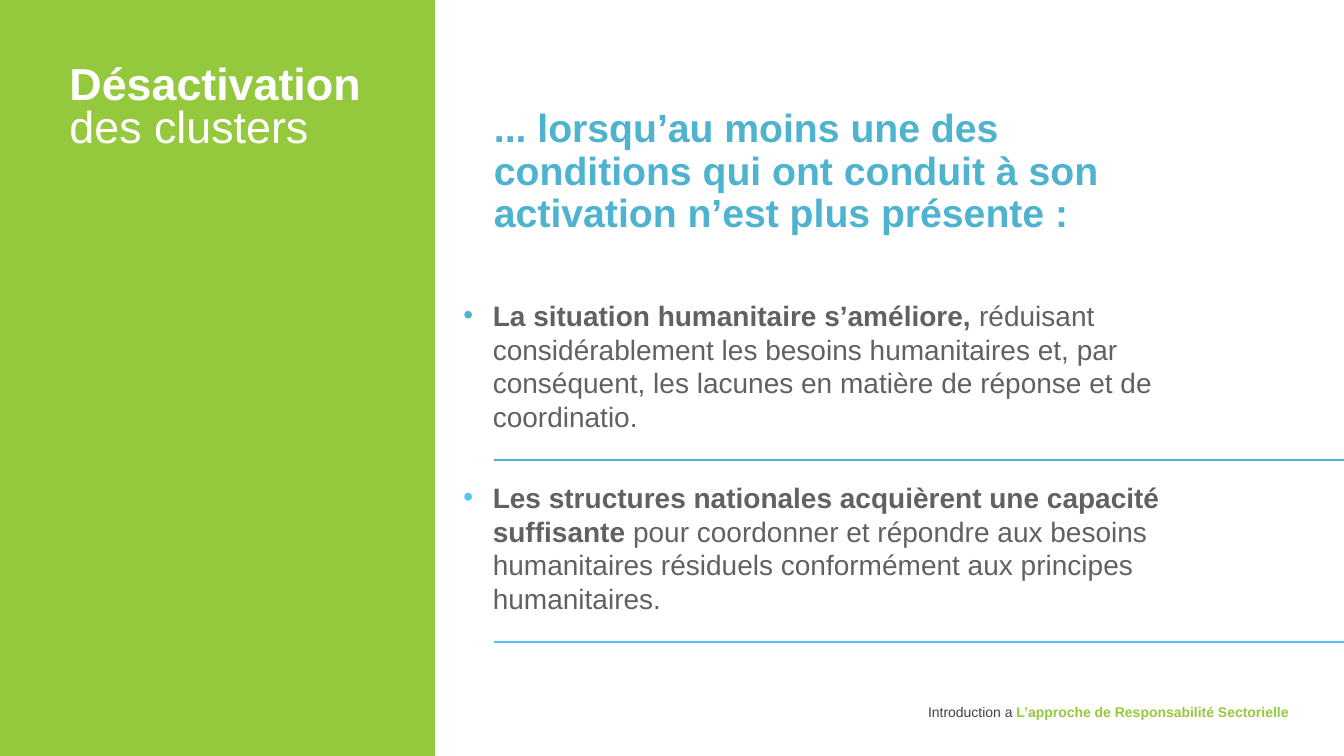
from pptx import Presentation
from pptx import util as u
from pptx.dml.color import RGBColor
from pptx.enum import shapes, text
from pptx.oxml import parse_xml
from pptx.oxml.ns import nsdecls

COLORS = {
    "green": "95C93D",
    "teal": "4EB3CF",
    "sky": "51C3F9",
    "gray": "606164",
    "dark": "404143",
    "white": "FFFFFF",
}


def set_frame(shape, left, top, width, height, margins):
    shape.left, shape.top = u.Cm(left), u.Cm(top)
    shape.width, shape.height = u.Cm(width), u.Cm(height)
    frame = shape.text_frame
    frame.word_wrap = True
    frame.auto_size = text.MSO_AUTO_SIZE.NONE
    frame.margin_left, frame.margin_top, frame.margin_right, frame.margin_bottom = map(u.Cm, margins)
    return frame


def format_run(run, size, color, bold):
    run.font.name = "Arial"
    run.font.size = u.Pt(size)
    run.font.bold = bold
    run.font.color.rgb = RGBColor.from_string(COLORS[color])


presentation = Presentation()
presentation.slide_width, presentation.slide_height = u.Cm(33.87), u.Cm(19.05)
slide = presentation.slides.add_slide(presentation.slide_layouts[5])
title = slide.shapes.title

panel = slide.shapes.add_shape(shapes.MSO_SHAPE.RECTANGLE, 0, 0, u.Cm(10.97), presentation.slide_height)
panel.shadow.inherit = False
panel.fill.solid()
panel.fill.fore_color.rgb = RGBColor.from_string(COLORS["green"])
panel.line.fill.background()
panel._element.addnext(title._element)

body_margins = (0, 0.13, 0.25, 0.13)
frame = set_frame(title, 1.75, 1.85, 9.22, 1.8, body_margins)
frame.vertical_anchor = text.MSO_ANCHOR.MIDDLE
frame.text = "Désactivation\vdes clusters"
paragraph = frame.paragraphs[0]
paragraph.alignment = text.PP_ALIGN.LEFT
paragraph.line_spacing = 0.8
for run, bold in zip(paragraph.runs, (True, False)):
    format_run(run, 32, "white", bold)

heading = slide.shapes.add_textbox(0, 0, 0, 0)
frame = set_frame(heading, 12.45, 2.62, 16.61, 3.5, body_margins)
frame.text = "... lorsqu’au moins une des conditions qui ont conduit à son activation n’est plus présente :"
paragraph = frame.paragraphs[0]
paragraph.line_spacing = 0.9
format_run(paragraph.runs[0], 28, "teal", True)

conditions = [
    ("La situation humanitaire s’améliore,",
     " réduisant considérablement les besoins humanitaires et, par conséquent, "
     "les lacunes en matière de réponse et de coordinatio.", "teal", 11.58),
    ("Les structures nationales acquièrent une capacité suffisante",
     " pour coordonner et répondre aux besoins humanitaires résiduels "
     "conformément aux principes humanitaires.", "sky", 16.18),
]
bullets = slide.shapes.add_textbox(0, 0, 0, 0)
frame = set_frame(bullets, 11.68, 7.39, 19.51, 8.31, body_margins)
for index, (lead, detail, accent, rule_top) in enumerate(conditions):
    paragraph = frame.add_paragraph() if index else frame.paragraphs[0]
    paragraph.text = lead
    paragraph.add_run().text = detail
    for run, bold in zip(paragraph.runs, (True, False)):
        format_run(run, 20, "gray", bold)
    paragraph.space_before = u.Pt(10)
    paragraph.space_after = u.Pt(0 if index else 24)
    properties = paragraph._p.get_or_add_pPr()
    properties.set("marL", str(u.Cm(0.74)))
    properties.set("indent", str(-u.Cm(0.74)))
    properties.append(parse_xml(
        f'<a:buClr {nsdecls("a")}><a:srgbClr val="{COLORS[accent]}"/></a:buClr>'))
    properties.append(parse_xml(f'<a:buFont {nsdecls("a")} typeface="Arial"/>'))
    properties.append(parse_xml(f'<a:buChar {nsdecls("a")} char="•"/>'))

    rule = slide.shapes.add_connector(
        shapes.MSO_CONNECTOR.STRAIGHT, u.Cm(12.45), u.Cm(rule_top),
        presentation.slide_width, u.Cm(rule_top))
    rule.line.color.rgb = RGBColor.from_string(COLORS[accent])
    rule.line.width = u.Pt(1.5)
    rule._element.spPr.append(parse_xml(f'<a:effectLst {nsdecls("a")}/>'))

footer = slide.shapes.add_textbox(0, 0, 0, 0)
frame = set_frame(footer, 21.62, 17.55, 10.85, 0.69, (0.25, 0.25, 0, 0.25))
paragraph = frame.paragraphs[0]
paragraph.text = "Introduction a "
paragraph.add_run().text = "L’approche de Responsabilité Sectorielle"
paragraph.alignment = text.PP_ALIGN.RIGHT
paragraph.line_spacing = 0.8
for run, color, bold in zip(paragraph.runs, ("dark", "green"), (False, True)):
    format_run(run, 10, color, bold)

presentation.save("out.pptx")
